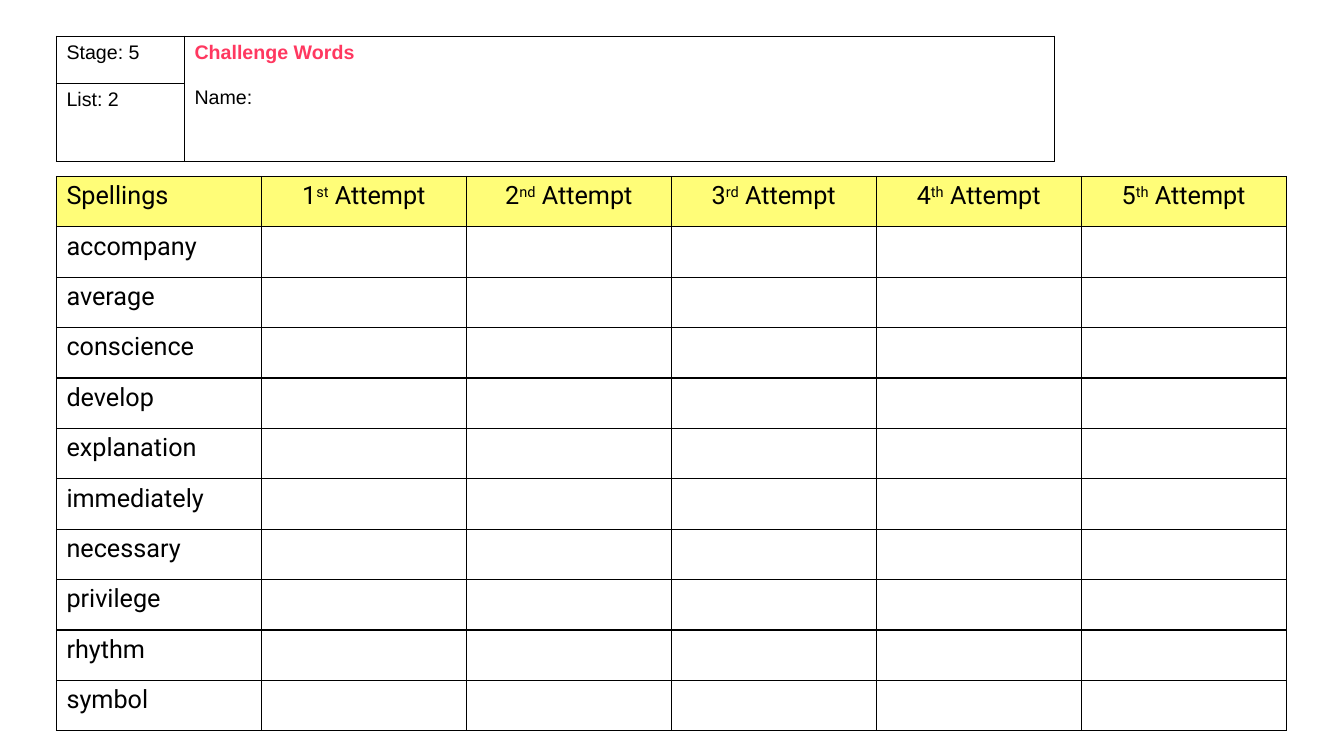
import pptx
import pptx.util
import pptx.dml.color
import pptx.enum.text
import pptx.oxml
import pptx.oxml.ns
from pptx.util import Inches

BLACK = "000000"
YELLOW = "FFFD78"
PINK = "FF3860"
ORDINALS = ["st", "nd", "rd", "th", "th"]
WORDS = ["accompany", "average", "conscience", "develop", "explanation",
         "immediately", "necessary", "privilege", "rhythm", "symbol"]


def color(hex_string):
    return pptx.dml.color.RGBColor.from_string(hex_string)


def write(paragraph, text, font="Roboto", size=18, fill=BLACK, bold=False, raised=False):
    run = paragraph.add_run()
    run.text = text
    run.font.name = font
    run.font.size = pptx.util.Pt(size)
    run.font.bold = bold
    run.font.color.rgb = color(fill)
    if raised:
        run._r.get_or_add_rPr().set("baseline", "30000")


def add_borders(cell):
    properties = cell._tc.get_or_add_tcPr()
    for position, side in enumerate(("lnL", "lnR", "lnT", "lnB")):
        border = pptx.oxml.parse_xml(
            f'<a:{side} {pptx.oxml.ns.nsdecls("a")} w="12700"><a:solidFill>'
            f'<a:srgbClr val="{BLACK}"/></a:solidFill></a:{side}>')
        properties.insert(position, border)


def add_grid(slide, left, top, widths, heights):
    frame = slide.shapes.add_table(
        len(heights), len(widths), Inches(left), Inches(top),
        Inches(sum(widths)), Inches(sum(heights)))
    grid = frame.table
    grid.first_row = False
    grid.horz_banding = False
    for column, width in zip(grid.columns, widths):
        column.width = Inches(width)
    for row, height in zip(grid.rows, heights):
        row.height = Inches(height)
    for cell in grid.iter_cells():
        cell.fill.background()
        add_borders(cell)
    return grid


def first_paragraph(cell):
    return cell.text_frame.paragraphs[0]


def add_list_details(slide):
    details = add_grid(slide, 0.56, 0.36, [1.27, 8.63], [0.47, 0.77])
    details.cell(0, 1).merge(details.cell(1, 1))
    label = {"font": "Arial", "size": 14}
    write(first_paragraph(details.cell(0, 0)), "Stage: 5", **label)
    write(first_paragraph(details.cell(1, 0)), "List: 2", **label)
    heading = details.cell(0, 1)
    write(first_paragraph(heading), "Challenge Words", fill=PINK, bold=True, **label)
    name_line = heading.text_frame.add_paragraph()
    name_line.space_before = pptx.util.Pt(16.5)
    write(name_line, "Name:", **label)


def add_spelling_attempts(slide):
    spellings = add_grid(slide, 0.56, 1.75, [2.033] * (len(ORDINALS) + 1),
                         [0.5] * (len(WORDS) + 1))
    for cell in spellings.rows[0].cells:
        cell.fill.solid()
        cell.fill.fore_color.rgb = color(YELLOW)
    write(first_paragraph(spellings.cell(0, 0)), "Spellings")
    for attempt, ordinal in enumerate(ORDINALS, start=1):
        heading = first_paragraph(spellings.cell(0, attempt))
        heading.alignment = pptx.enum.text.PP_ALIGN.CENTER
        write(heading, str(attempt))
        write(heading, ordinal, raised=True)
        write(heading, " Attempt")
    for row, word in enumerate(WORDS, start=1):
        write(first_paragraph(spellings.cell(row, 0)), word)


def main():
    presentation = pptx.Presentation()
    presentation.slide_width = Inches(13.33)
    presentation.slide_height = Inches(7.5)
    slide = presentation.slides.add_slide(presentation.slide_layouts[6])
    add_spelling_attempts(slide)
    add_list_details(slide)
    presentation.save("out.pptx")


if __name__ == "__main__":
    main()
